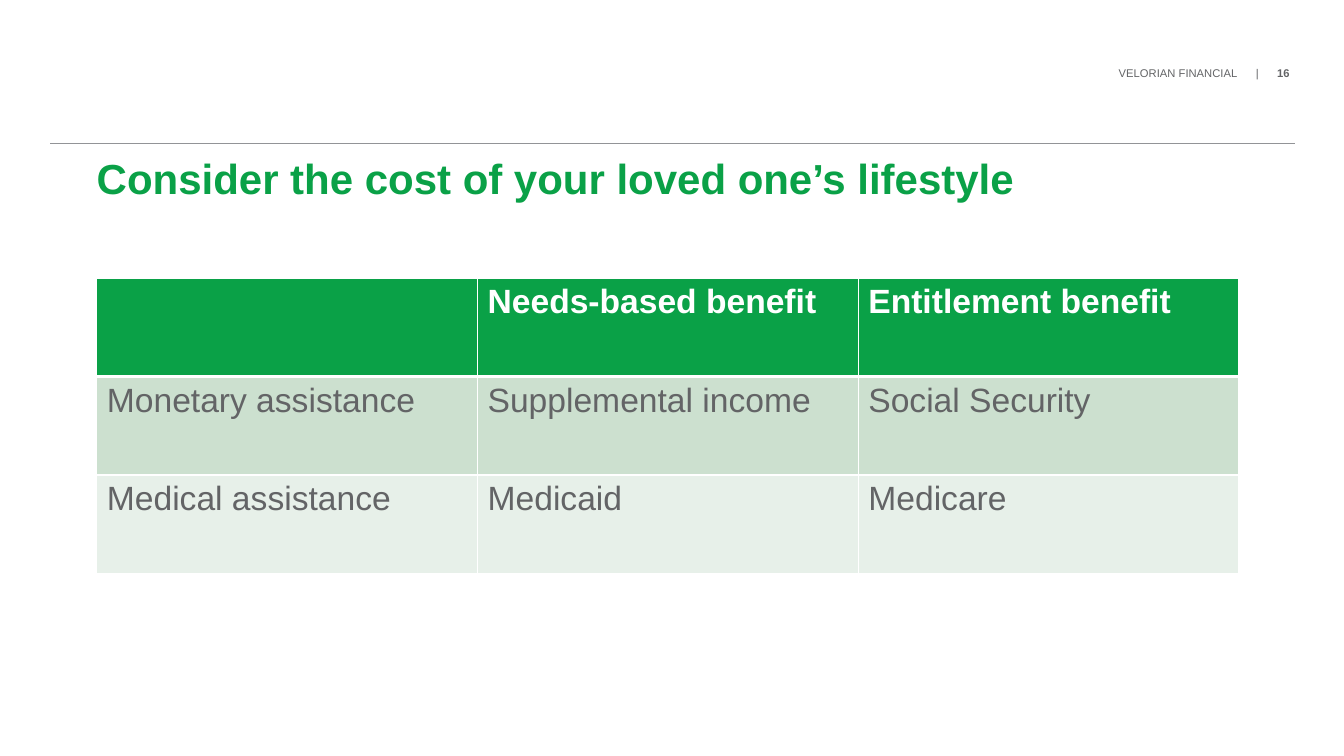
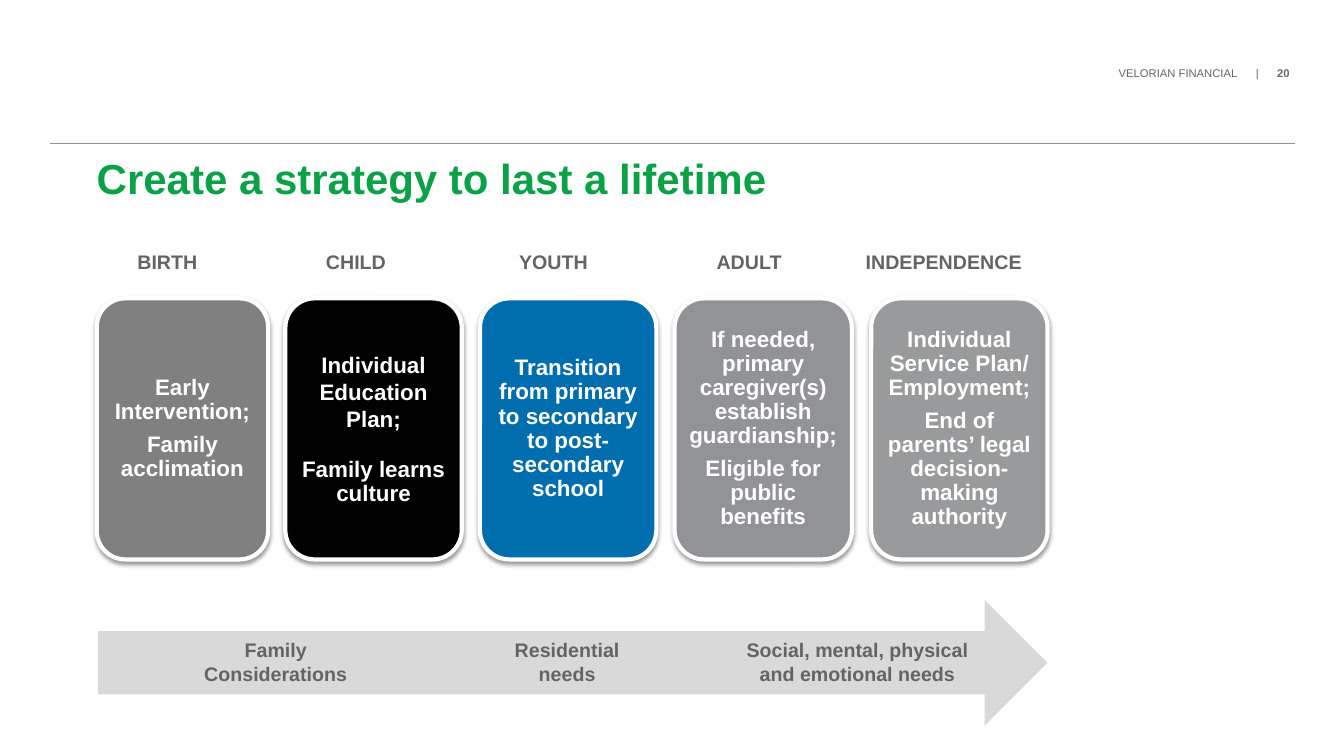
from lxml import etree
from pptx import Presentation
from pptx.dml.color import RGBColor
from pptx.enum.shapes import MSO_CONNECTOR, MSO_SHAPE
from pptx.enum.text import MSO_ANCHOR, PP_ALIGN
from pptx.oxml.ns import qn
from pptx.util import Inches, Pt

STRAIGHT = MSO_CONNECTOR.STRAIGHT
ROUNDED = MSO_SHAPE.ROUNDED_RECTANGLE
RIGHT_ARROW = MSO_SHAPE.RIGHT_ARROW
MIDDLE = MSO_ANCHOR.MIDDLE
LEFT, CENTER, RIGHT = PP_ALIGN.LEFT, PP_ALIGN.CENTER, PP_ALIGN.RIGHT

FONT = "Arial"
GREEN = RGBColor(0x0A, 0xA1, 0x47)
TEXT_GRAY = RGBColor(0x63, 0x64, 0x66)
RULE_GRAY = RGBColor(0x92, 0x94, 0x97)
ARROW_GRAY = RGBColor(0xD9, 0xD9, 0xD9)
WHITE = RGBColor(0xFF, 0xFF, 0xFF)
ROW_FILLS = (GREEN, RGBColor(0xCC, 0xE0, 0xCF), RGBColor(0xE7, 0xF0, 0xE9))

BRAND = "VELORIAN FINANCIAL"
CONTENT_LEFT = 0.96
CONTENT_WIDTH = 11.33
CARD_TOP, CARD_HEIGHT = 2.96, 2.59
STAGE_LABEL_WIDTH = 1.75

BENEFITS = (
    ("", "Needs-based benefit", "Entitlement benefit"),
    ("Monetary assistance", "Supplemental income", "Social Security"),
    ("Medical assistance", "Medicaid", "Medicare"),
)

STAGES = (
    ("BIRTH", 1.66, 0.96, 1.7, RGBColor(0x80, 0x80, 0x80),
     ("Early Intervention;", "Family acclimation")),
    ("CHILD", 3.53, 2.83, 1.75, RGBColor(0x00, 0x00, 0x00),
     ("Individual Education Plan;", "Family learns culture")),
    ("YOUTH", 5.49, 4.76, 1.75, RGBColor(0x00, 0x6D, 0xAF),
     ("Transition from primary to secondary to post-secondary school",)),
    ("ADULT", 7.43, 6.69, 1.76, RGBColor(0x92, 0x93, 0x97),
     ("If needed, primary caregiver(s) establish guardianship;",
      "Eligible for public benefits")),
    ("INDEPENDENCE", 9.36, 8.64, 1.75, RGBColor(0x99, 0x9A, 0x9C),
     ("Individual Service Plan/ Employment;",
      "End of parents’ legal decision-making authority")),
)

CONSIDERATIONS = (
    ("Family Considerations", 1.86, 1.75),
    ("Residential needs", 4.75, 1.75),
    ("Social, mental, physical and emotional needs", 7.17, 2.67),
)


def style(paragraph, size, color, bold=None, align=LEFT):
    paragraph.alignment = align
    font = paragraph.font
    font.name = FONT
    font.size = Pt(size)
    font.color.rgb = color
    font.bold = bold


def set_margins(frame, margin):
    frame.margin_left = frame.margin_right = Inches(margin)
    frame.margin_top = frame.margin_bottom = Inches(margin)


def add_text_box(slide, left, top, width, height):
    box = slide.shapes.add_textbox(
        Inches(left), Inches(top), Inches(width), Inches(height))
    box.text_frame.word_wrap = True
    return box.text_frame


def add_label(slide, text, left, top, width, height):
    paragraph = add_text_box(slide, left, top, width, height).paragraphs[0]
    paragraph.text = text
    style(paragraph, 14, TEXT_GRAY, True, CENTER)


def add_tab_stops(paragraph, *positions):
    stops = etree.SubElement(paragraph._p.get_or_add_pPr(), qn("a:tabLst"))
    for position in positions:
        etree.SubElement(stops, qn("a:tab"), pos=str(Inches(position)), algn="l")


def add_page_mark(slide, number):
    frame = add_text_box(slide, 10.53, 0.64, 2.26, 0.15)
    set_margins(frame, 0)
    frame.margin_top = Inches(0.02)
    paragraph = frame.paragraphs[0]
    add_tab_stops(paragraph, 1.36, 1.57)
    paragraph.add_run().text = f"{BRAND}\t|\t"
    page = paragraph.add_run()
    page.text = str(number)
    style(paragraph, 8, TEXT_GRAY, align=RIGHT)
    page.font.bold = True


def add_rule(slide):
    rule = slide.shapes.add_connector(
        STRAIGHT, Inches(0.5), Inches(1.42), Inches(12.84), Inches(1.42))
    rule.line.color.rgb = RULE_GRAY
    rule.line.width = Pt(0.5)
    etree.SubElement(rule._element.spPr, qn("a:effectLst"))


def add_title(slide, text):
    frame = add_text_box(slide, CONTENT_LEFT, 1.58, CONTENT_WIDTH, 1.05)
    set_margins(frame, 0)
    paragraph = frame.paragraphs[0]
    paragraph.text = text
    paragraph.line_spacing = Pt(31)
    style(paragraph, 30, GREEN, True)


def add_content_slide(deck, title, number):
    slide = deck.slides.add_slide(deck.slide_layouts[6])
    add_page_mark(slide, number)
    add_rule(slide)
    add_title(slide, title)
    return slide


def set_borders(cell, **widths):
    properties = cell._tc.get_or_add_tcPr()
    for side in "LRTB":
        line = etree.SubElement(properties, qn(f"a:ln{side}"),
                                w=str(Pt(widths.get(side, 1))))
        fill = etree.SubElement(line, qn("a:solidFill"))
        etree.SubElement(fill, qn("a:srgbClr"), val=str(WHITE))


def add_benefit_table(slide):
    table = slide.shapes.add_table(
        len(BENEFITS), len(BENEFITS[0]), Inches(CONTENT_LEFT), Inches(2.76),
        Inches(CONTENT_WIDTH), Inches(2.93)).table
    table.horz_banding = False
    for row, texts in enumerate(BENEFITS):
        header = row == 0
        edges = {0: {"B": 3}, 1: {"T": 3}}.get(row, {})
        for column, text in enumerate(texts):
            cell = table.cell(row, column)
            set_borders(cell, **edges)
            cell.fill.solid()
            cell.fill.fore_color.rgb = ROW_FILLS[row]
            paragraph = cell.text_frame.paragraphs[0]
            paragraph.text = text
            style(paragraph, 24, WHITE if header else TEXT_GRAY, header)


def add_soft_shadow(shape):
    effects = etree.SubElement(shape._element.spPr, qn("a:effectLst"))
    shadow = etree.SubElement(
        effects, qn("a:outerShdw"), blurRad=str(Pt(3.1)), dist=str(Pt(1.6)),
        dir="5400000", rotWithShape="0")
    color = etree.SubElement(shadow, qn("a:srgbClr"), val="000000")
    etree.SubElement(color, qn("a:alpha"), val="38000")


def add_card(slide, left, width, fill, texts):
    card = slide.shapes.add_shape(
        ROUNDED, Inches(left), Inches(CARD_TOP), Inches(width), Inches(CARD_HEIGHT))
    card.fill.solid()
    card.fill.fore_color.rgb = fill
    card.line.color.rgb = WHITE
    card.line.width = Pt(3)
    add_soft_shadow(card)
    frame = card.text_frame
    frame.word_wrap = True
    frame.vertical_anchor = MIDDLE
    set_margins(frame, 0.05)
    for index, text in enumerate(texts):
        paragraph = frame.add_paragraph() if index else frame.paragraphs[0]
        paragraph.text = text
        paragraph.line_spacing = 0.9
        paragraph.space_after = Pt(6)
        style(paragraph, 16, WHITE, True, CENTER)
    return frame


def add_stages(slide):
    for name, middle, left, width, fill, texts in STAGES:
        add_label(slide, name, middle - STAGE_LABEL_WIDTH / 2, 2.43,
                  STAGE_LABEL_WIDTH, 0.34)
        frame = add_card(slide, left, width, fill, texts)
        if name == "CHILD":
            plan, culture = frame.paragraphs
            plan.line_spacing = 1.0
            plan.space_after = Pt(0)
            culture.space_before = Pt(19)


def add_considerations(slide):
    arrow = slide.shapes.add_shape(
        RIGHT_ARROW, Inches(0.97), Inches(5.95), Inches(9.42), Inches(1.25))
    arrow.shadow.inherit = False
    arrow.fill.solid()
    arrow.fill.fore_color.rgb = ARROW_GRAY
    arrow.line.fill.background()
    for text, left, width in CONSIDERATIONS:
        add_label(slide, text, left, 6.28, width, 0.57)


def main():
    deck = Presentation()
    deck.slide_width = Inches(13.33)
    deck.slide_height = Inches(7.5)
    add_benefit_table(add_content_slide(
        deck, "Consider the cost of your loved one’s lifestyle", 16))
    strategy = add_content_slide(deck, "Create a strategy to last a lifetime", 20)
    add_stages(strategy)
    add_considerations(strategy)
    deck.save("out.pptx")


if __name__ == "__main__":
    main()
